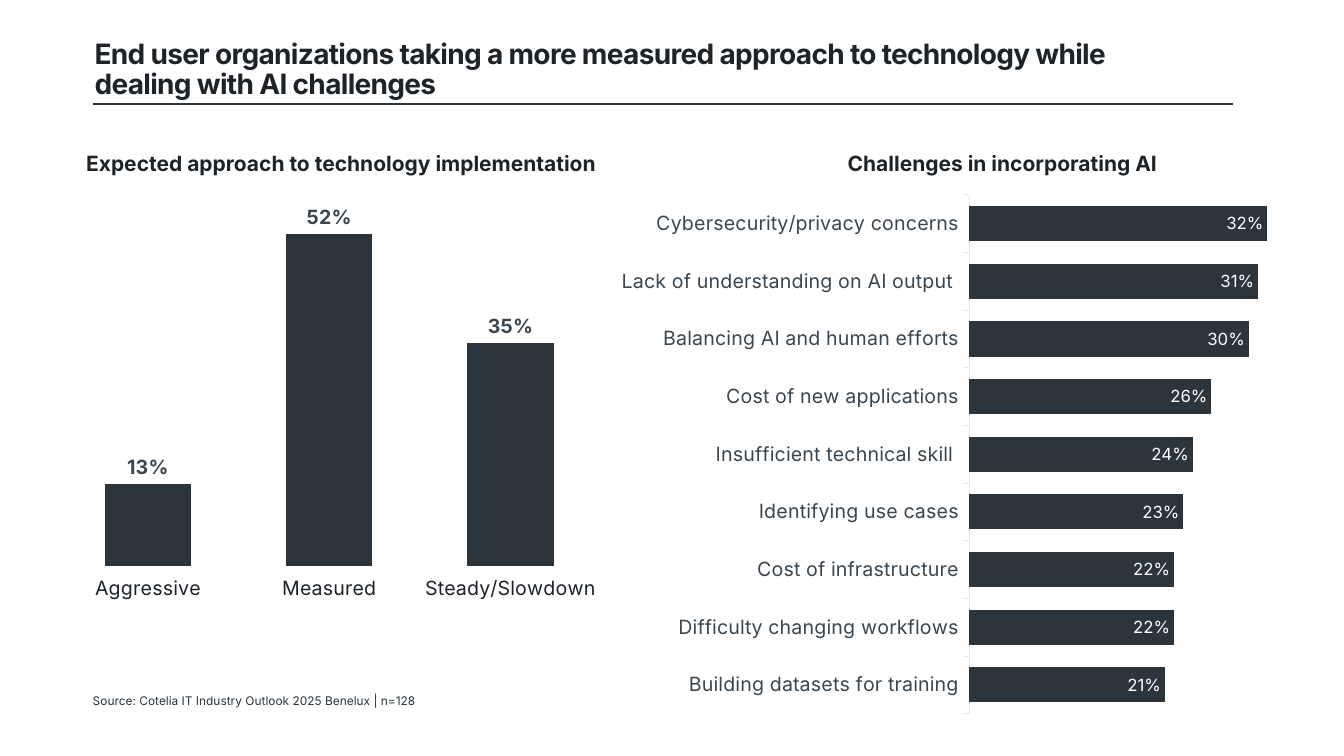
from dataclasses import dataclass
from typing import Optional

from lxml import etree
from pptx import Presentation
from pptx.chart.data import CategoryChartData
from pptx.dml.color import RGBColor
from pptx.enum.chart import XL_CHART_TYPE, XL_LABEL_POSITION, XL_TICK_LABEL_POSITION, XL_TICK_MARK
from pptx.enum.shapes import MSO_CONNECTOR
from pptx.enum.text import MSO_ANCHOR, PP_ALIGN
from pptx.oxml.ns import qn
from pptx.util import Pt

COLUMN, BAR = XL_CHART_TYPE.COLUMN_CLUSTERED, XL_CHART_TYPE.BAR_CLUSTERED
OUT_END, IN_END = XL_LABEL_POSITION.OUTSIDE_END, XL_LABEL_POSITION.INSIDE_END
TICK_OUT, TICK_NONE = XL_TICK_MARK.OUTSIDE, XL_TICK_MARK.NONE
NEXT_TO_AXIS = XL_TICK_LABEL_POSITION.NEXT_TO_AXIS
STRAIGHT = MSO_CONNECTOR.STRAIGHT
TOP, MIDDLE = MSO_ANCHOR.TOP, MSO_ANCHOR.MIDDLE
LEFT, CENTER = PP_ALIGN.LEFT, PP_ALIGN.CENTER


@dataclass(frozen=True)
class Theme:
    font: str = "Inter"
    chart_font: str = "Roboto"
    ink: str = "1D2328"
    dark: str = "2C353C"
    slate: str = "3A4650"
    grey: str = "586169"
    pale: str = "E5E7E9"
    white: str = "FFFFFF"
    title: float = 20
    heading: float = 15
    axis: float = 14
    value: float = 12
    source: float = 8.5


THEME = Theme()


@dataclass(frozen=True)
class Box:
    left: float
    top: float
    width: float
    height: float


@dataclass(frozen=True)
class Label:
    text: str
    box: Box
    size: float
    color: str = THEME.ink
    bold: bool = True
    align: PP_ALIGN = LEFT
    anchor: MSO_ANCHOR = TOP
    inset: Optional[float] = None
    line_spacing: Optional[float] = None
    tracking: Optional[int] = None


@dataclass(frozen=True)
class BarChart:
    kind: XL_CHART_TYPE
    box: Box
    plot: tuple[float, float, float, float]
    data: dict[str, float]
    axis_max: float
    gap: int
    overlap: int
    base_size: float
    axis_color: str
    axis_line: Optional[str]
    bar_line: Optional[str]
    label_position: XL_LABEL_POSITION
    label_size: float
    label_color: str
    label_bold: bool


LABELS = [
    Label("End user organizations taking a more measured approach to technology "
          "while dealing with AI challenges", Box(60.48, 25.2, 804.96, 50.4),
          THEME.title, anchor=MIDDLE, line_spacing=0.9, tracking=-50),
    Label("Expected approach to technology implementation",
          Box(45.36, 103.68, 396.72, 25.2), THEME.heading, align=CENTER),
    Label("Challenges in incorporating AI",
          Box(517.68, 103.68, 396.72, 25.2), THEME.heading, align=CENTER),
    Label("Source: Cotelia IT Industry Outlook 2025 Benelux | n=128",
          Box(66.24, 493.2, 504, 14.4), THEME.source, THEME.dark, bold=False,
          anchor=MIDDLE, inset=0),
]

CHARTS = [
    BarChart(COLUMN, Box(41.04, 145.44, 388.8, 324.72), (0, 0.038, 0.999, 0.761),
             {"Aggressive": 0.13, "Measured": 0.52, "Steady/Slowdown": 0.35},
             0.54, 108, 0, 18, THEME.ink, None, THEME.white,
             OUT_END, THEME.axis, THEME.slate, True),
    BarChart(BAR, Box(396, 129.6, 553.68, 384.48), (0.535, 0.025, 0.409, 0.964),
             {"Building datasets for training": 0.21,
              "Difficulty changing workflows": 0.22,
              "Cost of infrastructure": 0.22,
              "Identifying use cases": 0.23,
              "Insufficient technical skill ": 0.24,
              "Cost of new applications": 0.26,
              "Balancing AI and human efforts": 0.3,
              "Lack of understanding on AI output ": 0.31,
              "Cybersecurity/privacy concerns": 0.32},
             0.34, 64, -7, 10, THEME.slate, THEME.pale, None,
             IN_END, THEME.value, THEME.white, False),
]


def style_font(font, size: float, color: str, bold: bool = False, name: str = THEME.font) -> None:
    font.name, font.size, font.bold = name, Pt(size), bold
    font.color.rgb = RGBColor.from_string(color)


def style_line(line, color: Optional[str], width: float = 0.75) -> None:
    if color is None:
        line.fill.background()
        return
    line.color.rgb = RGBColor.from_string(color)
    line.width = Pt(width)


def place(box: Box) -> tuple[Pt, Pt, Pt, Pt]:
    return Pt(box.left), Pt(box.top), Pt(box.width), Pt(box.height)


def add_label(s, label: Label) -> None:
    tf = s.shapes.add_textbox(*place(label.box)).text_frame
    tf.word_wrap, tf.vertical_anchor = True, label.anchor
    if label.inset is not None:
        tf.margin_left = tf.margin_right = tf.margin_top = tf.margin_bottom = Pt(label.inset)
    tf.text = label.text
    p = tf.paragraphs[0]
    p.alignment, p.line_spacing = label.align, label.line_spacing
    r = p.runs[0]
    style_font(r.font, label.size, label.color, label.bold)
    if label.tracking is not None:
        r.font._element.set("spc", str(label.tracking))


def add_rule(s, left: float, right: float, y: float) -> None:
    sp = s.shapes.add_connector(STRAIGHT, Pt(left), Pt(y), Pt(right), Pt(y))
    style_line(sp.line, THEME.dark, 1)
    etree.SubElement(sp._element.spPr, qn("a:effectLst"))


def set_plot_layout(chart, plot: tuple[float, float, float, float]) -> None:
    area = chart._chartSpace.find(".//" + qn("c:plotArea"))
    for old in area.findall(qn("c:layout")):
        area.remove(old)
    layout = etree.Element(qn("c:layout"))
    manual = etree.SubElement(layout, qn("c:manualLayout"))
    settings = [("layoutTarget", "inner"), ("xMode", "edge"), ("yMode", "edge"),
                *zip("xywh", plot)]
    for tag, value in settings:
        etree.SubElement(manual, qn(f"c:{tag}")).set("val", str(value))
    area.insert(0, layout)


def add_bar_chart(s, spec_chart: BarChart) -> None:
    c = spec_chart
    data = CategoryChartData(number_format="0%")
    data.categories = list(c.data)
    data.add_series("Series 1", list(c.data.values()))
    chart = s.shapes.add_chart(c.kind, *place(c.box), data).chart
    chart.has_legend = chart.has_title = False
    style_font(chart.font, c.base_size, THEME.grey, name=THEME.chart_font)
    set_plot_layout(chart, c.plot)

    cat = chart.category_axis
    cat.major_tick_mark, cat.minor_tick_mark = TICK_OUT, TICK_NONE
    cat.tick_label_position = NEXT_TO_AXIS
    cat.has_major_gridlines = False
    style_font(cat.tick_labels.font, THEME.axis, c.axis_color)
    style_line(cat.format.line, c.axis_line)

    val = chart.value_axis
    val.minimum_scale, val.maximum_scale = 0, c.axis_max
    val.has_major_gridlines = val.visible = False

    plot = chart.plots[0]
    plot.gap_width, plot.overlap, plot.vary_by_categories = c.gap, c.overlap, False
    series = plot.series[0]
    series.format.fill.solid()
    series.format.fill.fore_color.rgb = RGBColor.from_string(THEME.dark)
    style_line(series.format.line, c.bar_line)

    labels = series.data_labels
    labels.show_value, labels.position = True, c.label_position
    labels.number_format, labels.number_format_is_linked = "0%", False
    style_font(labels.font, c.label_size, c.label_color, c.label_bold)


def main() -> None:
    prs = Presentation()
    prs.slide_width, prs.slide_height = Pt(960), Pt(540)
    s = prs.slides.add_slide(prs.slide_layouts[6])
    add_rule(s, 66.24, 880.56, 74.16)
    for chart in CHARTS:
        add_bar_chart(s, chart)
    for label in LABELS:
        add_label(s, label)
    prs.save("out.pptx")


if __name__ == "__main__":
    main()
